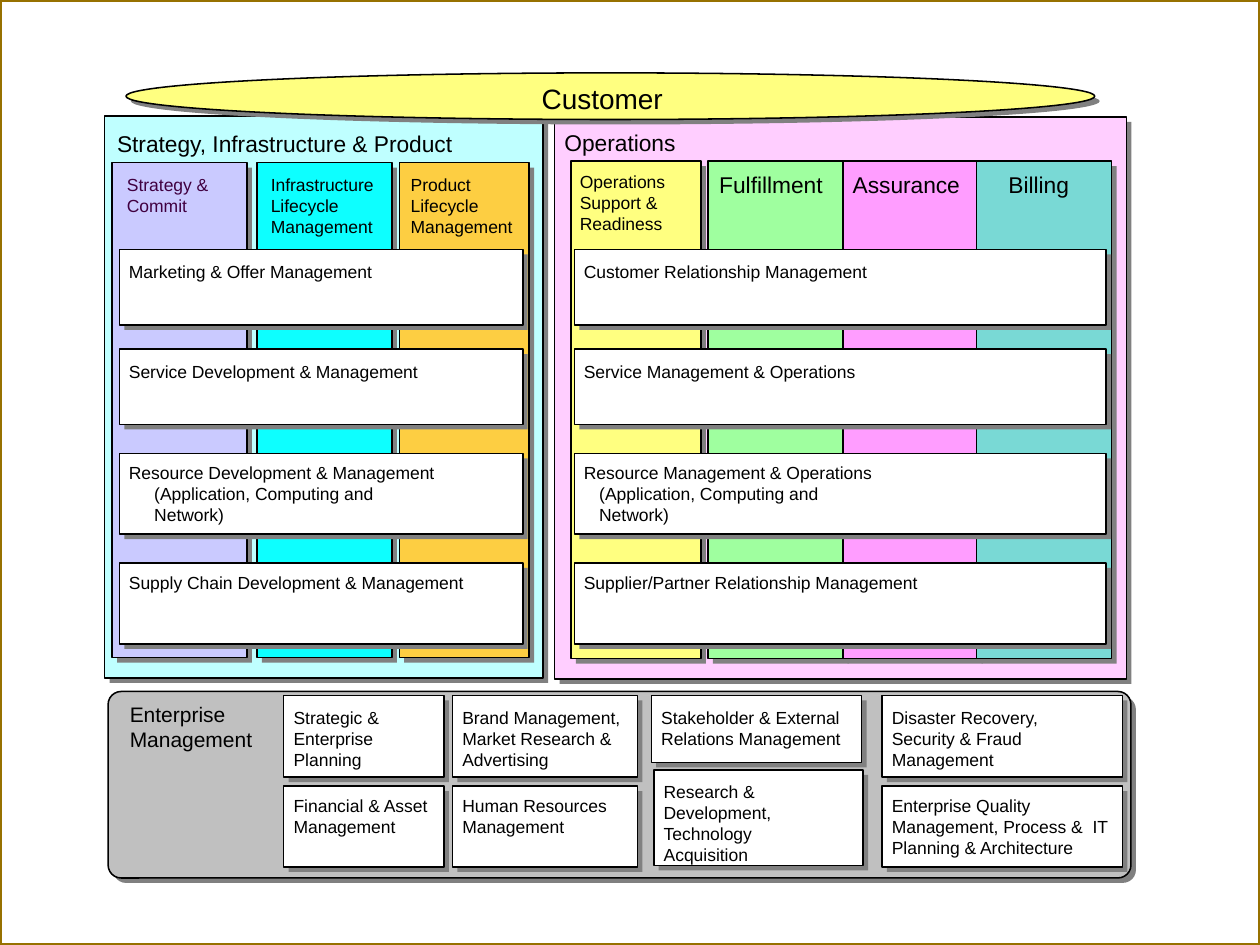
from pptx import Presentation
from pptx.dml.color import RGBColor
from pptx.enum.shapes import MSO_SHAPE
from pptx.enum.text import MSO_ANCHOR, PP_ALIGN
from pptx.util import Cm, Pt

SHADOW = 0.1  # offset of the grey shape behind each panel, in cm
RECT, ROUNDED, OVAL = MSO_SHAPE.RECTANGLE, MSO_SHAPE.ROUNDED_RECTANGLE, MSO_SHAPE.OVAL


def colour(code):
    return RGBColor.from_string(code)


def panel(bounds, fill, text, inset=(0.19, 0.23), size=10, kind=RECT,
          ink="000000", align=PP_ALIGN.LEFT, indent=0):
    """Draw a panel over its grey shadow; indent applies from the second line."""
    left, top, width, height = bounds
    for offset, shade in ((SHADOW, "808080"), (0, fill)):
        box = page.shapes.add_shape(kind, Cm(left + offset), Cm(top + offset),
                                    Cm(width), Cm(height))
        box.shadow.inherit = False
        box.fill.solid()
        box.fill.fore_color.rgb = colour(shade)
        if kind == ROUNDED:
            box.adjustments[0] = 0.07
        if offset:
            box.line.fill.background()
    box.line.color.rgb = colour("000000")
    box.line.width = Pt(0.88)

    frame = box.text_frame
    frame_format = {"margin_left": Cm(inset[0]), "margin_top": Cm(inset[1]),
                    "margin_right": 0, "margin_bottom": 0,
                    "word_wrap": True, "vertical_anchor": MSO_ANCHOR.TOP}
    for name, value in frame_format.items():
        setattr(frame, name, value)
    frame.text = text
    for number, para in enumerate(frame.paragraphs):
        para.alignment = align
        if indent and number:
            para._p.get_or_add_pPr().set("marL", str(Cm(indent)))
        for name, value in {"name": "Arial", "size": Pt(size)}.items():
            setattr(para.font, name, value)
        para.font.color.rgb = colour(ink)


deck = Presentation()
deck.slide_width, deck.slide_height = Cm(25.4), Cm(19.05)
page = deck.slides.add_slide(deck.slide_layouts[6])

# Page border
border = page.shapes.add_shape(RECT, 0, 0, deck.slide_width, deck.slide_height)
border.shadow.inherit = False
border.fill.solid()
border.fill.fore_color.rgb = colour("FFFFFF")
border.line.color.rgb = colour("977100")
border.line.width = Pt(2)

# Process areas: their columns, then the rows that cross them
row_spans = ((5.03, 1.52, 0.23), (7.04, 1.52, 0.23), (9.14, 1.63, 0.18), (11.35, 1.63, 0.18))
areas = [
    {
        "bounds": (11.18, 2.36, 11.53, 11.33), "fill": "FFCEFF",
        "title": "Operations", "inset": (0.2, 0.23),
        "column_span": (3.25, 10.03),
        "columns": [
            (14.27, 2.74, "9FFF9F", "Fulfillment", (0.23, 0.2), 13, "000000"),
            (16.99, 2.72, "FF9DFF", "Assurance", (0.2, 0.2), 13, "000000"),
            (19.69, 2.72, "79D9D5", "Billing", (0.64, 0.2), 13, "000000"),
            (11.51, 2.62, "FFFF80", "Operations\nSupport &\nReadiness", (0.18, 0.2), 10, "000000"),
        ],
        "row_extent": (11.58, 10.72), "indent": 0.31,
        "rows": [
            "Customer Relationship Management",
            "Service Management & Operations",
            "Resource Management & Operations\n(Application, Computing and\nNetwork)",
            "Supplier/Partner Relationship Management",
        ],
    },
    {
        "bounds": (2.11, 2.34, 8.84, 11.33), "fill": "BFFFFF",
        "title": "Strategy, Infrastructure & Product", "inset": (0.25, 0.28),
        "column_span": (3.28, 9.98),
        "columns": [
            (8.05, 2.62, "FDCE42", "Product\nLifecycle\nManagement", (0.23, 0.22), 10, "000000"),
            (5.18, 2.72, "0DFFFF", "Infrastructure\nLifecycle\nManagement", (0.28, 0.22), 10, "000000"),
            (2.26, 2.72, "CACAFF", "Strategy &\nCommit", (0.3, 0.22), 10, "400040"),
        ],
        "row_extent": (2.41, 8.13), "indent": 0.51,
        "rows": [
            "Marketing & Offer Management",
            "Service Development & Management",
            "Resource Development & Management\n(Application, Computing and\nNetwork)",
            "Supply Chain Development & Management",
        ],
    },
]
for area in areas:
    panel(area["bounds"], area["fill"], area["title"], area["inset"], 13)
    top, height = area["column_span"]
    for left, width, fill, label, inset, size, ink in area["columns"]:
        panel((left, top, width, height), fill, label, inset, size, ink=ink)
    left, width = area["row_extent"]
    for label, (top, height, margin) in zip(area["rows"], row_spans):
        panel((left, top, width, height), "FFFFFF", label, (0.19, margin),
              indent=area["indent"])

# Enterprise management
panel((2.18, 13.94, 20.62, 3.76), "C0C0C0", "Enterprise\nManagement",
      (0.36, 0.13), 12, ROUNDED)
upper, lower = (14.02, 1.65, 0.23), (15.85, 1.63, 0.18)
enterprise_cards = [
    (5.72, 3.23, upper, "Strategic &\nEnterprise\nPlanning"),
    (5.72, 3.23, lower, "Financial & Asset\nManagement"),
    (9.12, 3.73, upper, "Brand Management,\nMarket Research &\nAdvertising"),
    (9.12, 3.73, lower, "Human Resources\nManagement"),
    (13.13, 4.24, (14.02, 1.35, 0.23), "Stakeholder & External\nRelations Management"),
    (13.18, 4.22, (15.52, 1.93, 0.23), "Research &\nDevelopment,\nTechnology\nAcquisition"),
    (17.78, 4.85, upper, "Disaster Recovery,\nSecurity & Fraud\nManagement"),
    (17.78, 4.85, lower,
     "Enterprise Quality\nManagement, Process &  IT\nPlanning & Architecture"),
]
for left, width, (top, height, margin), label in enterprise_cards:
    panel((left, top, width, height), "FFFFFF", label, (0.2, margin))

# Customer
panel((2.54, 1.47, 19.53, 0.94), "FFFF80", "Customer", (-0.33, 0.04), 16, OVAL,
      align=PP_ALIGN.CENTER)

deck.save("out.pptx")
